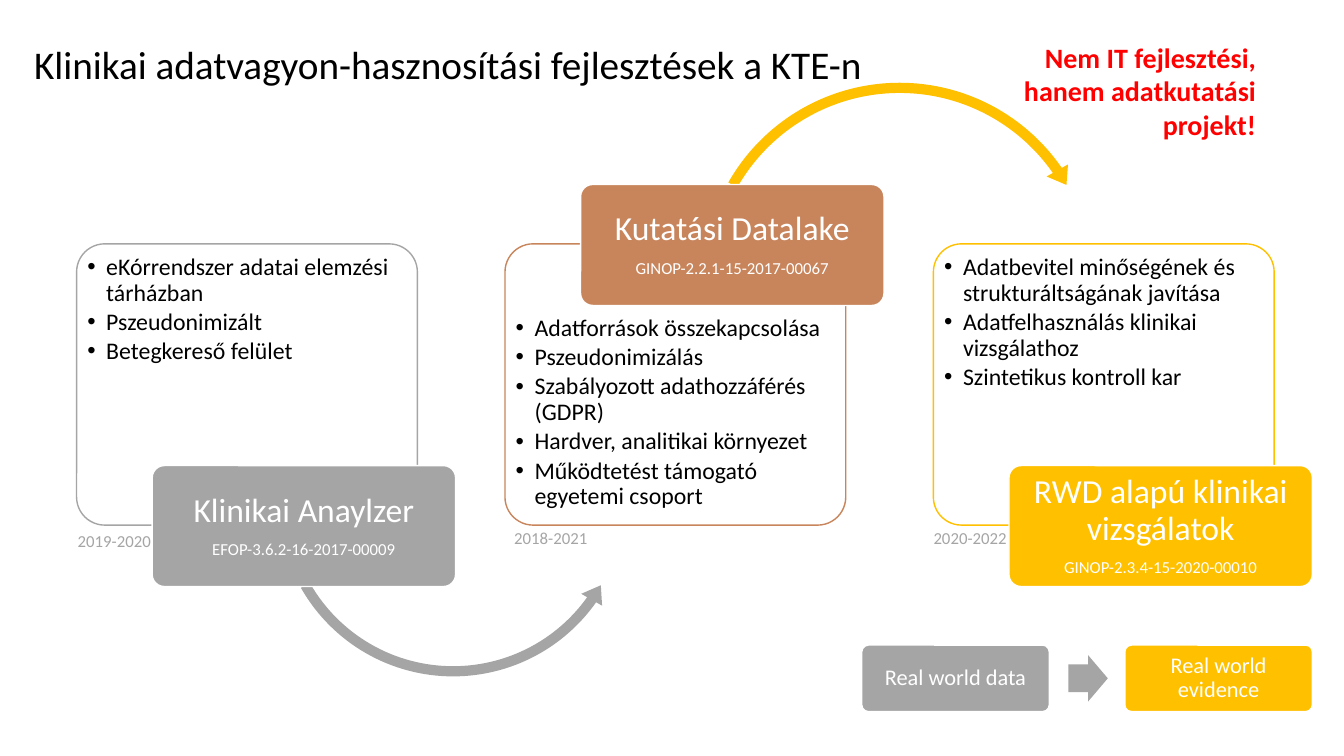
"""Build the slide on clinical data development projects."""
from dataclasses import dataclass

from lxml import etree
from pptx import Presentation
from pptx.dml.color import RGBColor
from pptx.enum.shapes import MSO_SHAPE
from pptx.enum.text import MSO_ANCHOR, PP_ALIGN
from pptx.oxml.ns import qn
from pptx.util import Pt

ROUNDED = MSO_SHAPE.ROUNDED_RECTANGLE
ARC_OVER = MSO_SHAPE.CIRCULAR_ARROW
ARC_UNDER = MSO_SHAPE.LEFT_CIRCULAR_ARROW
BLOCK_ARROW = MSO_SHAPE.RIGHT_ARROW
LEFT, CENTER, RIGHT = PP_ALIGN.LEFT, PP_ALIGN.CENTER, PP_ALIGN.RIGHT
TOP, MIDDLE = MSO_ANCHOR.TOP, MSO_ANCHOR.MIDDLE


@dataclass(frozen=True)
class Theme:
    """Colours, typeface and type sizes of the slide."""
    font: str = "Calibri"
    black: str = "000000"
    white: str = "FFFFFF"
    gray: str = "A5A5A5"
    copper: str = "C8855C"
    gold: str = "FFC000"
    red: str = "FF0000"
    title: int = 28
    heading: int = 24
    callout: int = 20
    bullet: int = 17
    legend: int = 16
    small: int = 12


@dataclass(frozen=True)
class Stage:
    """One project: its card, label and dates."""
    name: str
    code: str
    color: str
    bullets: tuple
    years: str
    years_at: tuple
    raised: bool = False


THEME = Theme()
CARD_LEFT, CARD_TOP, CARD_STEP = 54.7, 174.2, 306
CARD_SIZE = (243.4, 200.9)
LABEL_SHIFT, LABEL_SIZE = 54, (216.7, 86.4)
LABEL_HIGH, LABEL_LOW = 131.8, 332.6
YEARS_SIZE = (105.8, 20.9)
LEGEND_TOP, LEGEND_SIZE = 460.8, (133.9, 47.5)

STAGES = (
    Stage("Klinikai Anaylzer", "EFOP-3.6.2-16-2017-00009", THEME.gray,
          ("eKórrendszer adatai elemzési tárházban", "Pszeudonimizált",
           "Betegkereső felület"),
          "2019-2020", (28.8, 375.8)),
    Stage("Kutatási Datalake", "GINOP-2.2.1-15-2017-00067", THEME.copper,
          ("Adatforrások összekapcsolása", "Pszeudonimizálás",
           "Szabályozott adathozzáférés (GDPR)", "Hardver, analitikai környezet",
           "Működtetést támogató egyetemi csoport"),
          "2018-2021", (340.6, 373.7), raised=True),
    Stage("RWD alapú klinikai vizsgálatok", "GINOP-2.3.4-15-2020-00010", THEME.gold,
          ("Adatbevitel minőségének és strukturáltságának javítása",
           "Adatfelhasználás klinikai vizsgálathoz", "Szintetikus kontroll kar"),
          "2020-2022", (640.1, 373.7)),
)
ARCS = {
    0: (ARC_UNDER, (193.7, 228.2), (259.9, 259.9), THEME.gray,
        (0.028, 3.463, 21.218, 90.245, 0.033)),
    1: (ARC_OVER, (496.8, 54), (291.6, 291.6), THEME.gold,
        (0.025, 3.071, 195.174, 125.755, 0.03)),
}


def add_bullet(para):
    """Give a paragraph a hanging round bullet."""
    properties = para._p.get_or_add_pPr()
    properties.set("marL", str(Pt(13.5)))
    properties.set("indent", str(Pt(-13.5)))
    etree.SubElement(properties, qn("a:buFont"), typeface="Arial")
    etree.SubElement(properties, qn("a:buChar"), char="•")


def write_text(frame, *lines, color=THEME.black, align=LEFT, anchor=TOP, bold=False,
               margins=(7.2, 3.6, 7.2, 3.6), spacing=1.0, after=0.0, bullets=False,
               wrap=True):
    """Fill a text frame with (text, size) lines, one paragraph each."""
    frame.word_wrap = wrap
    frame.vertical_anchor = anchor
    (frame.margin_left, frame.margin_top,
     frame.margin_right, frame.margin_bottom) = map(Pt, margins)
    for index, (text, size) in enumerate(lines):
        para = frame.add_paragraph() if index else frame.paragraphs[0]
        para.alignment = align
        para.line_spacing = spacing
        para.space_after = Pt(after * size)
        if bullets:
            add_bullet(para)
        span = para.add_run()
        span.text = text
        span.font.name = THEME.font
        span.font.size = Pt(size)
        span.font.bold = bold
        span.font.color.rgb = RGBColor.from_string(color)


def add_text(page, at, size, *lines, **text_format):
    """Add a text box holding the given lines."""
    box = page.shapes.add_textbox(*map(Pt, at + size))
    write_text(box.text_frame, *lines, **text_format)


def add_block(page, preset, at, size, fill, line=None, adjust=(0.1,), alpha=None):
    """Add a flat preset shape and return it."""
    block = page.shapes.add_shape(preset, *map(Pt, at + size))
    block.shadow.inherit = False
    for index, value in enumerate(adjust):
        block.adjustments[index] = value
    block.fill.solid()
    block.fill.fore_color.rgb = RGBColor.from_string(fill)
    if alpha:
        tint = block._element.spPr.find(f"{qn('a:solidFill')}/{qn('a:srgbClr')}")
        etree.SubElement(tint, qn("a:alpha"), val=str(alpha * 1000))
    if line:
        block.line.color.rgb = RGBColor.from_string(line)
        block.line.width = Pt(1)
    else:
        block.line.fill.background()
    return block


def add_label(page, at, size, fill, *lines, margins):
    """Add a filled rounded label with centred white text."""
    label = add_block(page, ROUNDED, at, size, fill, line=THEME.white)
    write_text(label.text_frame, *lines, color=THEME.white, align=CENTER,
               anchor=MIDDLE, margins=margins, spacing=0.9, after=0.35)


def add_stage(page, index, stage):
    """Add the card, outgoing arc, label and dates of one project."""
    left = CARD_LEFT + index * CARD_STEP
    card = add_block(page, ROUNDED, (left, CARD_TOP), CARD_SIZE, THEME.white,
                     line=stage.color, alpha=90)
    write_text(card.text_frame, *((text, THEME.bullet) for text in stage.bullets),
               margins=(1.8, 45.5 if stage.raised else 2, 1.8, 2),
               spacing=0.9, after=0.15, bullets=True)
    if index in ARCS:
        preset, at, size, color, adjust = ARCS[index]
        add_block(page, preset, at, size, color, adjust=adjust)
    label_top = LABEL_HIGH if stage.raised else LABEL_LOW
    add_label(page, (left + LABEL_SHIFT, label_top), LABEL_SIZE, stage.color,
              (stage.name, THEME.heading), (stage.code, THEME.small),
              margins=(3.6, 2.4, 3.6, 2.4))
    add_text(page, stage.years_at, YEARS_SIZE, (stage.years, THEME.small),
             color=THEME.gray, align=CENTER, anchor=MIDDLE)


def add_legend(page):
    """Add the step from data to evidence."""
    for left, color, text in ((615.6, THEME.gray, "Real world data"),
                              (803.5, THEME.gold, "Real world evidence")):
        add_label(page, (left, LEGEND_TOP), LEGEND_SIZE, color,
                  (text, THEME.legend), margins=(4.8,) * 4)
    add_block(page, BLOCK_ARROW, (763.2, 468), (28.1, 33.1), THEME.gray,
              adjust=(0.6, 0.5))


def main():
    """Build and save the deck."""
    deck = Presentation()
    deck.slide_width, deck.slide_height = Pt(960), Pt(540)
    page = deck.slides.add_slide(deck.slide_layouts[6])
    for index, stage in enumerate(STAGES):
        add_stage(page, index, stage)
    add_legend(page)
    add_text(page, (17.3, 25.2), (612, 41),
             ("Klinikai adatvagyon-hasznosítási fejlesztések a KTE-n", THEME.title),
             wrap=False)
    add_text(page, (692.6, 25.2), (211.7, 79.9),
             ("Nem IT fejlesztési, hanem adatkutatási projekt!", THEME.callout),
             color=THEME.red, align=RIGHT, bold=True)
    deck.save("out.pptx")


if __name__ == "__main__":
    main()
